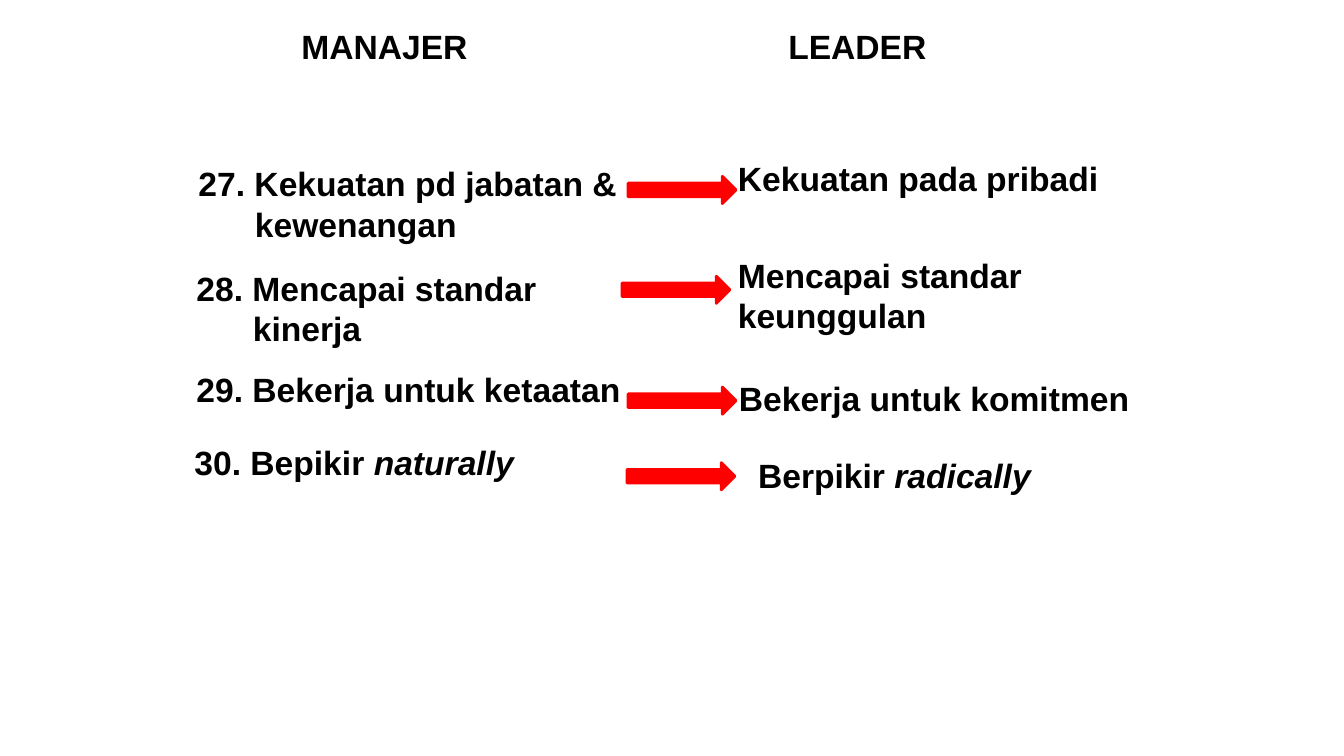
"""Build the slide that sets manager traits against leader traits."""
from dataclasses import dataclass

import pptx
import pptx.dml.color
import pptx.enum.shapes
import pptx.enum.text
import pptx.util
from pptx.util import Inches

FONT = "Arial"
BLACK = "000000"
RED = "FF0000"
HANG = 0.56
LINE = 0.4


@dataclass(frozen=True)
class Label:
    """A bold text, with an optional italic ending and hanging indent."""
    left: float
    top: float
    width: float
    lines: tuple[str, ...]
    slant: str = ""
    hang: float = 0


@dataclass(frozen=True)
class Arrow:
    """The top left corner of an arrow."""
    left: float
    top: float


HEADS = (
    Label(2.89, 0.21, 2.52, ("MANAJER",)),
    Label(7.72, 0.21, 2.76, ("LEADER",)),
)
TRAITS = (
    Label(1.87, 1.57, 4.55, ("27. Kekuatan pd jabatan &", "kewenangan"), hang=HANG),
    Label(7.22, 1.52, 4.55, ("Kekuatan pada pribadi",)),
    Label(1.85, 2.61, 4.55, ("28. Mencapai standar", "kinerja"), hang=HANG),
    Label(7.22, 2.48, 4.55, ("Mencapai standar", "keunggulan")),
    Label(1.85, 3.61, 4.55, ("29. Bekerja untuk ketaatan",)),
    Label(7.23, 3.7, 4.55, ("Bekerja untuk komitmen",)),
    Label(1.83, 4.33, 4.55, ("30. Bepikir ",), "naturally"),
    Label(7.42, 4.46, 4.55, ("Berpikir ",), "radically"),
)
ARROWS = (Arrow(6.23, 1.75), Arrow(6.17, 2.74), Arrow(6.23, 3.84), Arrow(6.22, 4.59))


def color(code: str) -> pptx.dml.color.RGBColor:
    """Turn a hex string into a colour."""
    return pptx.dml.color.RGBColor.from_string(code)


def write(slide: pptx.slide.Slide, label: Label) -> None:
    """Draw one label as a text box."""
    height = 0.11 + LINE * len(label.lines)
    box = slide.shapes.add_textbox(
        Inches(label.left), Inches(label.top), Inches(label.width), Inches(height))
    frame = box.text_frame
    frame.word_wrap = True
    frame.auto_size = pptx.enum.text.MSO_AUTO_SIZE.SHAPE_TO_FIT_TEXT
    frame.text = "\n".join(label.lines)
    if label.slant:
        run = frame.paragraphs[-1].add_run()
        run.text = label.slant
        run.font.italic = True
    for row, para in enumerate(frame.paragraphs):
        if label.hang:
            props = para._p.get_or_add_pPr()
            props.set("marL", str(Inches(label.hang)))
            props.set("indent", str(0 if row else -Inches(label.hang)))
        for run in para.runs:
            run.font.name = FONT
            run.font.size = pptx.util.Pt(24)
            run.font.bold = True
            run.font.color.rgb = color(BLACK)


def point(slide: pptx.slide.Slide, arrow: Arrow) -> None:
    """Draw one red block arrow."""
    shape = slide.shapes.add_shape(
        pptx.enum.shapes.MSO_SHAPE.RIGHT_ARROW,
        Inches(arrow.left), Inches(arrow.top), Inches(1.07), Inches(0.27))
    shape.shadow.inherit = False
    shape.fill.solid()
    shape.fill.fore_color.rgb = color(RED)
    shape.line.color.rgb = color(RED)
    shape.line.width = pptx.util.Pt(2)


def main() -> None:
    """Build and save the deck."""
    deck = pptx.Presentation()
    deck.slide_width = Inches(13.33)
    deck.slide_height = Inches(7.5)
    slide = deck.slides.add_slide(deck.slide_layouts[6])
    for label in HEADS + TRAITS:
        write(slide, label)
    for arrow in ARROWS:
        point(slide, arrow)
    deck.save("out.pptx")


if __name__ == "__main__":
    main()
